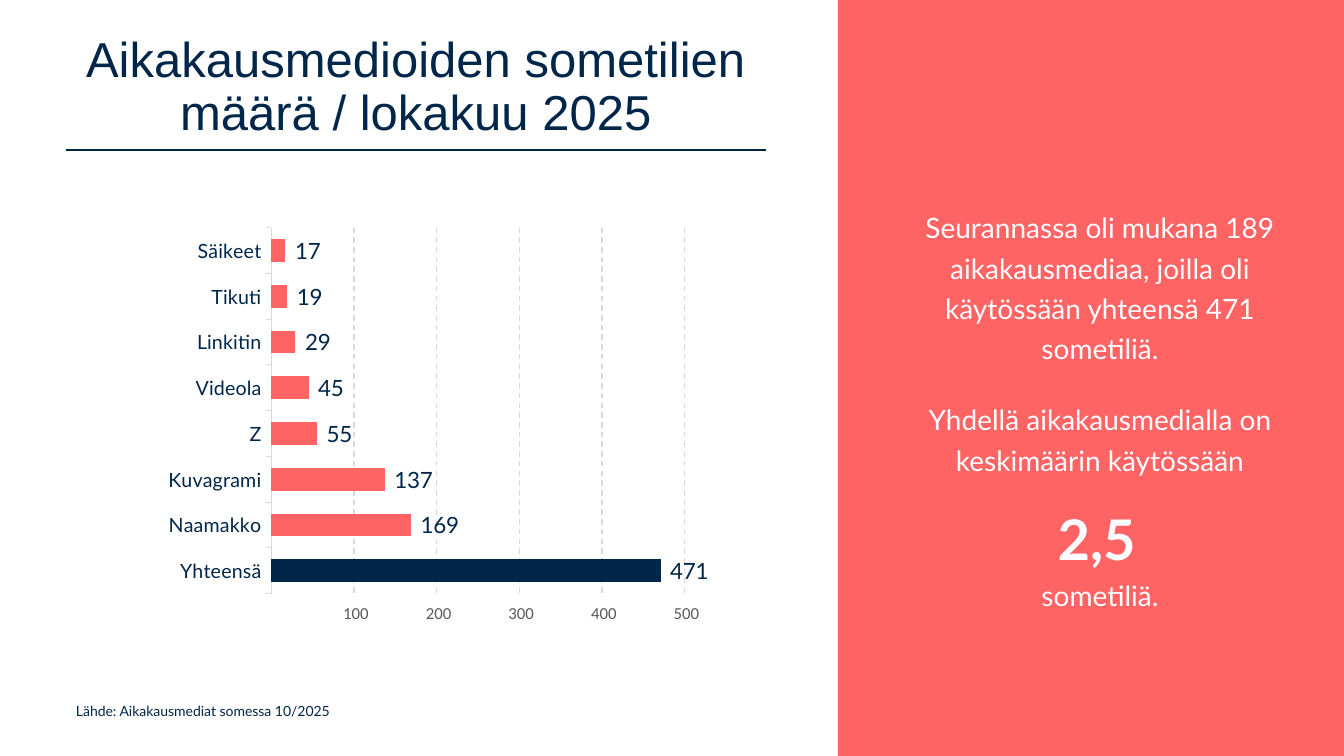
from lxml import etree
from pptx import Presentation
from pptx.chart.data import CategoryChartData
from pptx.dml.color import RGBColor
from pptx.enum.chart import XL_CHART_TYPE, XL_LABEL_POSITION, XL_TICK_MARK
from pptx.enum.dml import MSO_LINE
from pptx.enum.shapes import MSO_CONNECTOR, MSO_SHAPE
from pptx.enum.text import MSO_ANCHOR, PP_ALIGN
from pptx.oxml import parse_xml
from pptx.oxml.ns import nsdecls, qn
from pptx.util import Pt

BAR = XL_CHART_TYPE.BAR_CLUSTERED
OUTER = XL_LABEL_POSITION.OUTSIDE_END
TICK = XL_TICK_MARK.OUTSIDE
DASH = MSO_LINE.DASH
STRAIGHT = MSO_CONNECTOR.STRAIGHT
RECT = MSO_SHAPE.RECTANGLE
MIDDLE = MSO_ANCHOR.MIDDLE
TOP = MSO_ANCHOR.TOP
CENTER = PP_ALIGN.CENTER
LEFT = PP_ALIGN.LEFT

NAVY = RGBColor(0x00, 0x26, 0x49)
CORAL = RGBColor(0xFF, 0x64, 0x64)
PALE = RGBColor(0xFE, 0xFC, 0xFF)
GRID = RGBColor(0xD9, 0xD9, 0xD9)
GRAY = RGBColor(0x59, 0x59, 0x59)
BLACK = RGBColor(0, 0, 0)

FORMAT = r"#\ ##0;\-#\ ##0;;@"
COUNTS = [
    ("Yhteensä", 471),
    ("Naamakko", 169),
    ("Kuvagrami", 137),
    ("Z", 55),
    ("Videola", 45),
    ("Linkitin", 29),
    ("Tikuti", 19),
    ("Säikeet", 17),
]


def px(n):
    return round(n * 914400 / 100.8)


def place(shape, *box):
    shape.left, shape.top, shape.width, shape.height = map(px, box)


def style(font, name, size, color, bold=False):
    font.name, font.size, font.bold = name, Pt(size), bold
    font.color.rgb = color


def add_run(para, text, name, size, color, bold=False):
    run = para.add_run()
    run.text = text
    style(run.font, name, size, color, bold)


def set_para(para, align, line=1, before=0):
    para.alignment = align
    para.line_spacing = line
    para.space_before = Pt(before)


def add_box(slide, box, anchor):
    frame = slide.shapes.add_textbox(*map(px, box)).text_frame
    frame.word_wrap = True
    frame.vertical_anchor = anchor
    return frame


def add_panel(slide, box):
    panel = slide.shapes.add_shape(RECT, *map(px, box))
    panel.shadow.inherit = False
    panel.fill.solid()
    panel.fill.fore_color.rgb = CORAL
    panel.line.fill.background()


def add_rule(slide, ends):
    rule = slide.shapes.add_connector(STRAIGHT, *map(px, ends))
    rule.line.color.rgb = NAVY
    rule.line.width = Pt(1)
    etree.SubElement(rule._element.spPr, qn("a:effectLst"))


def set_title(slide, text, box):
    title = slide.shapes.title
    place(title, *box)
    frame = title.text_frame
    frame.word_wrap = True
    frame.vertical_anchor = MIDDLE
    para = frame.paragraphs[0]
    set_para(para, CENTER, 0.9)
    add_run(para, text, "Arial", 35, NAVY)


def add_facts(slide, box):
    frame = add_box(slide, box, MIDDLE)
    facts = [
        ("Seurannassa oli mukana 189 aikakausmediaa, joilla oli "
         "käytössään yhteensä 471 sometiliä.", 0),
        ("Yhdellä aikakausmedialla on keskimäärin käytössään", 22),
    ]
    para = frame.paragraphs[0]
    for text, before in facts:
        set_para(para, CENTER, 1.2, before)
        add_run(para, text, "Lato", 20, PALE)
        para = frame.add_paragraph()
    set_para(para, CENTER, 1.2, 10)
    add_run(para, "2,5", "Lato", 40, PALE, True)
    add_run(para, " ", "Lato", 20, PALE, True)
    para.add_line_break()
    add_run(para, "sometiliä.", "Lato", 20, PALE)


def set_plot(chart, x, y, w, h):
    area = chart._chartSpace.chart.plotArea
    for old in area.findall(qn("c:layout")):
        area.remove(old)
    sizes = "".join(f'<c:{tag} val="{val}"/>'
                    for tag, val in zip("xywh", (x, y, w, h)))
    area.insert(0, parse_xml(
        f'<c:layout {nsdecls("c")}><c:manualLayout>'
        '<c:layoutTarget val="inner"/><c:xMode val="edge"/>'
        f'<c:yMode val="edge"/>{sizes}</c:manualLayout></c:layout>'))


def set_axes(chart):
    cat, val = chart.category_axis, chart.value_axis
    cat.major_tick_mark = val.major_tick_mark = TICK
    cat.has_major_gridlines = False
    style(cat.tick_labels.font, "Lato", 14, NAVY)
    cat.format.line.color.rgb = GRID
    cat.format.line.width = Pt(0.75)
    val.minimum_scale, val.maximum_scale, val.major_unit = 0, 500, 100
    style(val.tick_labels.font, "Calibri", 12, GRAY)
    val.tick_labels.number_format = FORMAT
    val.tick_labels.number_format_is_linked = False
    val.format.line.fill.background()
    val.has_major_gridlines = True
    grid = val.major_gridlines.format.line
    grid.color.rgb, grid.width, grid.dash_style = GRID, Pt(1), DASH


def paint(part, color):
    part.format.fill.solid()
    part.format.fill.fore_color.rgb = color


def add_bars(slide, box):
    data = CategoryChartData()
    data.categories = [name for name, _ in COUNTS]
    data.add_series("Series 1", [count for _, count in COUNTS])
    chart = slide.shapes.add_chart(BAR, *map(px, box), data).chart
    chart.has_title = chart.has_legend = False
    style(chart.font, "Calibri", 10, BLACK)
    set_plot(chart, 0.324, 0.086, 0.493, 0.838)
    set_axes(chart)
    plot = chart.plots[0]
    plot.gap_width, plot.vary_by_categories = 100, False
    bars = plot.series[0]
    bars.invert_if_negative = False
    paint(bars, CORAL)
    paint(bars.points[0], NAVY)
    labels = bars.data_labels
    labels.show_value, labels.position = True, OUTER
    labels.number_format, labels.number_format_is_linked = FORMAT, False
    style(labels.font, "Lato", 16, NAVY)


def main():
    deck = Presentation()
    deck.slide_width, deck.slide_height = px(1344), px(756)
    slide = deck.slides.add_slide(deck.slide_layouts[5])
    add_panel(slide, (838, 0, 506, 756))
    add_rule(slide, (66, 150, 766, 150))
    para = add_box(slide, (66, 698, 663, 44), TOP).paragraphs[0]
    set_para(para, LEFT)
    add_run(para, "Lähde: Aikakausmediat somessa 10/2025", "Lato", 10, NAVY)
    set_title(slide, "Aikakausmedioiden sometilien määrä / lokakuu 2025",
              (66, 25, 700, 126))
    add_facts(slide, (911, 151, 378, 514))
    add_bars(slide, (0, 190, 838, 437))
    deck.save("out.pptx")


if __name__ == "__main__":
    main()
